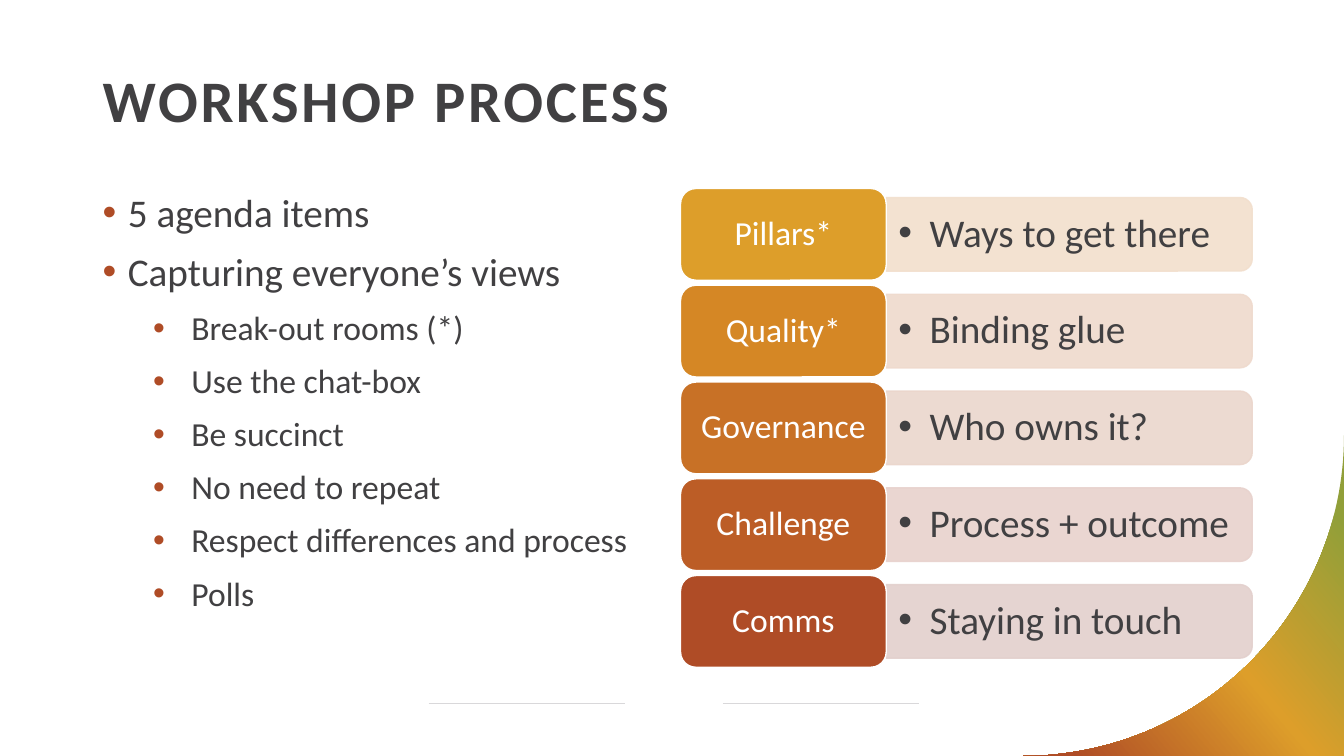
from copy import deepcopy
from math import cos, sin, pi
from lxml.etree import SubElement
from pptx import Presentation
from pptx.dml.color import RGBColor
from pptx.enum.shapes import MSO_CONNECTOR, MSO_SHAPE
from pptx.enum.text import MSO_ANCHOR, PP_ALIGN
from pptx.oxml.ns import qn
from pptx.util import Inches, Pt

TITLE = "WORKSHOP PROCESS"
POINTS = [
    (0, "5 agenda items"),
    (0, "Capturing everyone’s views"),
    (1, "Break-out rooms (*)"),
    (1, "Use the chat-box"),
    (1, "Be succinct"),
    (1, "No need to repeat"),
    (1, "Respect differences and process"),
    (1, "Polls"),
]
AGENDA = [
    ("Pillars*", "Ways to get there", "DD9E2A", "F2DFCD"),
    ("Quality*", "Binding glue", "D58725", "EFDACD"),
    ("Governance", "Who owns it?", "C87126", "EBD6CC"),
    ("Challenge", "Process + outcome", "BC5D26", "E8D2CD"),
    ("Comms", "Staying in touch", "AF4C26", "E3D0CD"),
]
COLORS = {"ink": "414042", "rust": "AF4C26", "gold": "DD9E2A",
          "green": "919F39", "rule": "D9D8DA", "white": "FFFFFF"}
STOPS = [(0.12, "green"), (0.5, "gold"), (0.91, "rust")]
LEVELS = [(28, 0.25, 0.25), (24, 0.88, 0.38)]
RULES = [4.25, 7.17]
WIDE, HIGH = 13.33, 7.5
LEFT, TOP, STEP = 6.75, 1.87, 0.96
TAB_W, TAB_H, BAR_W, BAR_H = 2.04, 0.91, 3.63, 0.73


def rgb(code):
    """Turn a hex string into a colour."""
    return RGBColor.from_string(code)


def style(para, size, code, bold=False):
    """Set the line spacing and font of a paragraph."""
    para.line_spacing = 0.9
    for run in para.runs:
        font = run.font
        font.name, font.size, font.bold = "Calibri", Pt(size), bold
        font.color.rgb = rgb(code)


def bullet(para, margin, hang, code):
    """Give a paragraph a hanging round bullet."""
    props = para._p.get_or_add_pPr()
    props.set("marL", str(Inches(margin)))
    props.set("indent", str(-Inches(hang)))
    tint = SubElement(props, qn("a:buClr"))
    SubElement(tint, qn("a:srgbClr"), val=code)
    SubElement(props, qn("a:buFont"), typeface="Arial")
    SubElement(props, qn("a:buChar"), char="•")


def add_text(slide, x, y, w, h):
    """Add a wrapping text box and return its frame."""
    box = slide.shapes.add_textbox(Inches(x), Inches(y), Inches(w), Inches(h))
    box.text_frame.word_wrap = True
    return box.text_frame


def add_block(slide, kind, x, y, w, h, fill, line):
    """Add a filled and outlined preset shape."""
    block = slide.shapes.add_shape(
        kind, Inches(x), Inches(y), Inches(w), Inches(h))
    block.shadow.inherit = False
    block.fill.solid()
    block.fill.fore_color.rgb = rgb(fill)
    block.line.color.rgb = rgb(line)
    block.line.width = Pt(1)
    return block


def add_rules(slide):
    """Draw the two thin footer rules."""
    for x in RULES:
        rule = slide.shapes.add_connector(
            MSO_CONNECTOR.STRAIGHT, Inches(x), Inches(6.98),
            Inches(x + 1.95), Inches(6.98))
        rule.line.color.rgb = rgb(COLORS["rule"])
        rule.line.width = Pt(0.5)
        SubElement(rule._element.spPr, qn("a:effectLst"))


def add_corner(slide):
    """Draw the curved gradient corner."""
    radius = 3.18
    arc = [(WIDE - radius + radius * cos(i * pi / 120),
            HIGH - radius + radius * sin(i * pi / 120)) for i in range(61)]
    edge = [(Inches(x), Inches(y)) for x, y in arc + [(10.09, HIGH)]]
    pen = slide.shapes.build_freeform(Inches(WIDE), Inches(HIGH))
    pen.add_line_segments(edge, close=True)
    corner = pen.convert_to_shape()
    corner.shadow.inherit = False
    corner.line.fill.background()
    corner.fill.gradient()
    corner.fill.gradient_angle = 220
    stops = corner._element.spPr.find(".//" + qn("a:gsLst"))
    stops.append(deepcopy(stops[0]))
    for stop, (place, name) in zip(corner.fill.gradient_stops, STOPS):
        stop.position = place
        stop.color.rgb = rgb(COLORS[name])


def add_points(slide):
    """Write the bulleted list on the left."""
    frame = add_text(slide, 0.92, 1.87, 5.67, 4.76)
    for i, (level, words) in enumerate(POINTS):
        para = frame.add_paragraph() if i else frame.paragraphs[0]
        para.text, para.level = words, level
        size, margin, hang = LEVELS[level]
        bullet(para, margin, hang, COLORS["rust"])
        para.space_after = Pt(12)
        style(para, size, COLORS["ink"])


def add_row(slide, y, label, words, dark, pale):
    """Draw one agenda row: pale bar, its text and the dark tab."""
    edge, mid = LEFT + TAB_W, y + TAB_H / 2
    bar = add_block(slide, MSO_SHAPE.ROUND_2_SAME_RECTANGLE,
                    edge + (BAR_W - BAR_H) / 2, mid - BAR_W / 2,
                    BAR_H, BAR_W, pale, pale)
    bar.rotation = 90
    for tint in bar._element.spPr.iter(qn("a:srgbClr")):
        SubElement(tint, qn("a:alpha"), val="90000")

    frame = add_text(slide, edge, mid - 0.33, 3.59, 0.66)
    frame.vertical_anchor = MSO_ANCHOR.MIDDLE
    frame.margin_left = frame.margin_right = Inches(0.12)
    frame.margin_top = frame.margin_bottom = Inches(0.06)
    para = frame.paragraphs[0]
    para.text, para.level = words, 1
    bullet(para, 0.31, 0.31, COLORS["ink"])
    style(para, 28, COLORS["ink"])

    tab = add_block(slide, MSO_SHAPE.ROUNDED_RECTANGLE,
                    LEFT, y, TAB_W, TAB_H, dark, COLORS["white"])
    tab.text_frame.text = label
    tab.text_frame.vertical_anchor = MSO_ANCHOR.MIDDLE
    para = tab.text_frame.paragraphs[0]
    para.alignment = PP_ALIGN.CENTER
    style(para, 24, COLORS["white"])


def main():
    """Build the slide and save it."""
    deck = Presentation()
    deck.slide_width, deck.slide_height = Inches(WIDE), Inches(HIGH)
    slide = deck.slides.add_slide(deck.slide_layouts[6])
    add_rules(slide)
    add_corner(slide)
    add_points(slide)
    frame = add_text(slide, 0.92, 0.66, 11.5, 1.02)
    frame.text = TITLE
    head = frame.paragraphs[0]
    style(head, 42, COLORS["ink"], True)
    head.runs[0].font._element.set("spc", "200")
    for i, row in enumerate(AGENDA):
        add_row(slide, TOP + i * STEP, *row)
    deck.save("out.pptx")


if __name__ == "__main__":
    main()
